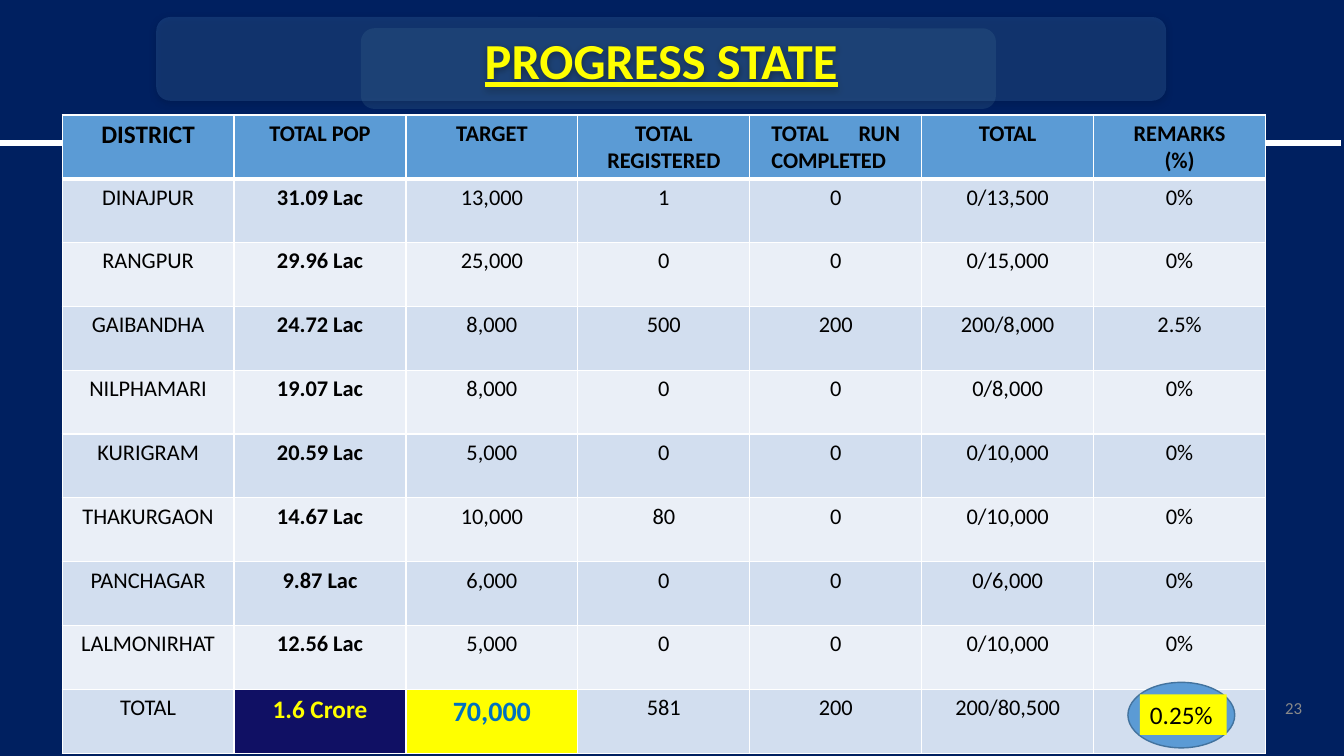
from lxml.etree import SubElement
from pptx import Presentation
from pptx.dml.color import RGBColor
from pptx.enum.shapes import MSO_CONNECTOR, MSO_SHAPE
from pptx.enum.text import MSO_ANCHOR, PP_ALIGN
from pptx.oxml import parse_xml
from pptx.oxml.ns import nsdecls, qn
from pptx.util import Pt

HUES = {
    "navy": "002060", "blue": "5B9BD5", "edge": "43739E", "panel": "11346D",
    "odd": "D2DEEF", "even": "EAEFF7", "dark": "101064", "yellow": "FFFF00",
    "azure": "0070C0", "black": "000000", "white": "FFFFFF", "grey": "898989",
}
HEADS = ["DISTRICT", "TOTAL POP", "TARGET", "TOTAL REGISTERED",
         "TOTAL RUN COMPLETED", "TOTAL", "REMARKS\n(%)"]
ROWS = [
    ["DINAJPUR", "31.09 Lac", "13,000", "1", "0", "0/13,500", "0%"],
    ["RANGPUR", "29.96 Lac", "25,000", "0", "0", "0/15,000", "0%"],
    ["GAIBANDHA", "24.72 Lac", "8,000", "500", "200", "200/8,000", "2.5%"],
    ["NILPHAMARI", "19.07 Lac", "8,000", "0", "0", "0/8,000", "0%"],
    ["KURIGRAM", "20.59 Lac", "5,000", "0", "0", "0/10,000", "0%"],
    ["THAKURGAON", "14.67 Lac", "10,000", "80", "0", "0/10,000", "0%"],
    ["PANCHAGAR", "9.87 Lac", "6,000", "0", "0", "0/6,000", "0%"],
    ["LALMONIRHAT", "12.56 Lac", "5,000", "0", "0", "0/10,000", "0%"],
    ["TOTAL", "1.6 Crore", "70,000", "581", "200", "200/80,500", "0.25%"],
]
COL, ROW = 122.8, 45.6


def tint(name):
    return RGBColor.from_string(HUES[name])


def write(frame, text, size, hue="black", bold=False, line=False,
          align=PP_ALIGN.CENTER):
    for i, part in enumerate(text.split("\n")):
        para = frame.add_paragraph() if i else frame.paragraphs[0]
        para.alignment = align
        run = para.add_run()
        run.text = part
        font = run.font
        font.name, font.size = "Calibri", Pt(size)
        font.bold, font.underline = bold, line
        font.color.rgb = tint(hue)


def add_form(slide, kind, box, fill, edge=None):
    form = slide.shapes.add_shape(kind, *map(Pt, box))
    form.shadow.inherit = False
    form.fill.solid()
    form.fill.fore_color.rgb = tint(fill)
    if edge:
        form.line.color.rgb = tint(edge)
        form.line.width = Pt(1)
    else:
        form.line.fill.background()
    return form


def add_rule(slide, left, right, top):
    rule = slide.shapes.add_connector(
        MSO_CONNECTOR.STRAIGHT, Pt(left), Pt(top), Pt(right), Pt(top))
    rule.line.color.rgb = tint("white")
    rule.line.width = Pt(4.5)
    SubElement(rule.element.spPr, qn("a:effectLst"))


def add_title(slide, text):
    form = add_form(slide, MSO_SHAPE.ROUNDED_RECTANGLE,
                    (111.6, 12.2, 721.4, 59.8), "blue")
    props = form.element.spPr
    hue = props.find(qn("a:solidFill"))[0]
    SubElement(hue, qn("a:alpha"), val="19000")
    # Soft shadow just below
    glow = props.find(qn("a:effectLst"))
    glow.append(parse_xml(
        f'<a:outerShdw {nsdecls("a")} blurRad="{Pt(4.5)}" dist="{Pt(1.5)}" '
        'dir="5400000" rotWithShape="0"><a:srgbClr val="000000">'
        '<a:alpha val="63000"/></a:srgbClr></a:outerShdw>'))
    form.text_frame.vertical_anchor = MSO_ANCHOR.MIDDLE
    write(form.text_frame, text, 36, "yellow", True, True)


def add_edges(cell, base):
    props = cell._tc.get_or_add_tcPr()
    sides = (("L", 1), ("R", 1), ("T", 1), ("B", base))
    for i, (side, wide) in enumerate(sides):
        props.insert(i, parse_xml(
            f'<a:ln{side} {nsdecls("a")} w="{Pt(wide)}"><a:solidFill>'
            f'<a:srgbClr val="{HUES["white"]}"/></a:solidFill></a:ln{side}>'))


def get_style(row, col):
    """Return fill, size, text colour and weight for a cell."""
    if row == 0:
        return "blue", 16 if col else 18, "black", True
    if row == len(ROWS) and col == 1:
        return "dark", 18, "yellow", True
    if row == len(ROWS) and col == 2:
        return "yellow", 20, "azure", True
    return "odd" if row % 2 else "even", 16, "black", col == 1


def add_grid(slide, left, top):
    data = [HEADS] + ROWS
    wide, high = len(HEADS), len(data)
    grid = slide.shapes.add_table(
        high, wide, Pt(left), Pt(top), Pt(COL * wide), Pt(ROW * high)).table
    for col in grid.columns:
        col.width = Pt(COL)
    for r, texts in enumerate(data):
        grid.rows[r].height = Pt(ROW)
        for c, text in enumerate(texts):
            cell = grid.cell(r, c)
            fill, size, hue, bold = get_style(r, c)
            cell.fill.solid()
            cell.fill.fore_color.rgb = tint(fill)
            # Spread the words of this one heading to the margins
            spread = r == 0 and c == 4
            if spread:
                cell.margin_left = cell.margin_right = Pt(15.5)
            align = PP_ALIGN.JUSTIFY if spread else PP_ALIGN.CENTER
            write(cell.text_frame, text, size, hue, bold, align=align)
            add_edges(cell, 1 if r else 3)


def add_label(slide, box, text, size, hue):
    label = slide.shapes.add_textbox(*map(Pt, box))
    frame = label.text_frame
    frame.word_wrap = True
    frame.margin_left = frame.margin_right = 0
    frame.margin_top = frame.margin_bottom = 0
    write(frame, text, size, hue, align=PP_ALIGN.LEFT)


def main():
    deck = Presentation()
    deck.slide_width, deck.slide_height = Pt(960), Pt(540)
    slide = deck.slides.add_slide(deck.slide_layouts[6])
    back = slide.background.fill
    back.solid()
    back.fore_color.rgb = tint("navy")

    # Backdrop and page number
    add_form(slide, MSO_SHAPE.ROUNDED_RECTANGLE,
             (257.8, 20.2, 453.6, 57.6), "panel")
    add_label(slide, (918, 498.5, 24.5, 14.6), "23", 12, "grey")
    add_rule(slide, 0, 957.6, 102.2)

    # Table and title
    add_grid(slide, 44.4, 82.1)
    add_title(slide, "PROGRESS STATE")

    # Overall rate badge
    add_form(slide, MSO_SHAPE.OVAL, (805.7, 487.4, 76.3, 46.8),
             "blue", "edge")
    badge = add_form(slide, MSO_SHAPE.RECTANGLE, (814.3, 496.1, 61.9, 28.8),
                     "yellow")
    badge.text_frame.vertical_anchor = MSO_ANCHOR.TOP
    write(badge.text_frame, "0.25%", 18, align=PP_ALIGN.LEFT)

    deck.save("out.pptx")


if __name__ == "__main__":
    main()
